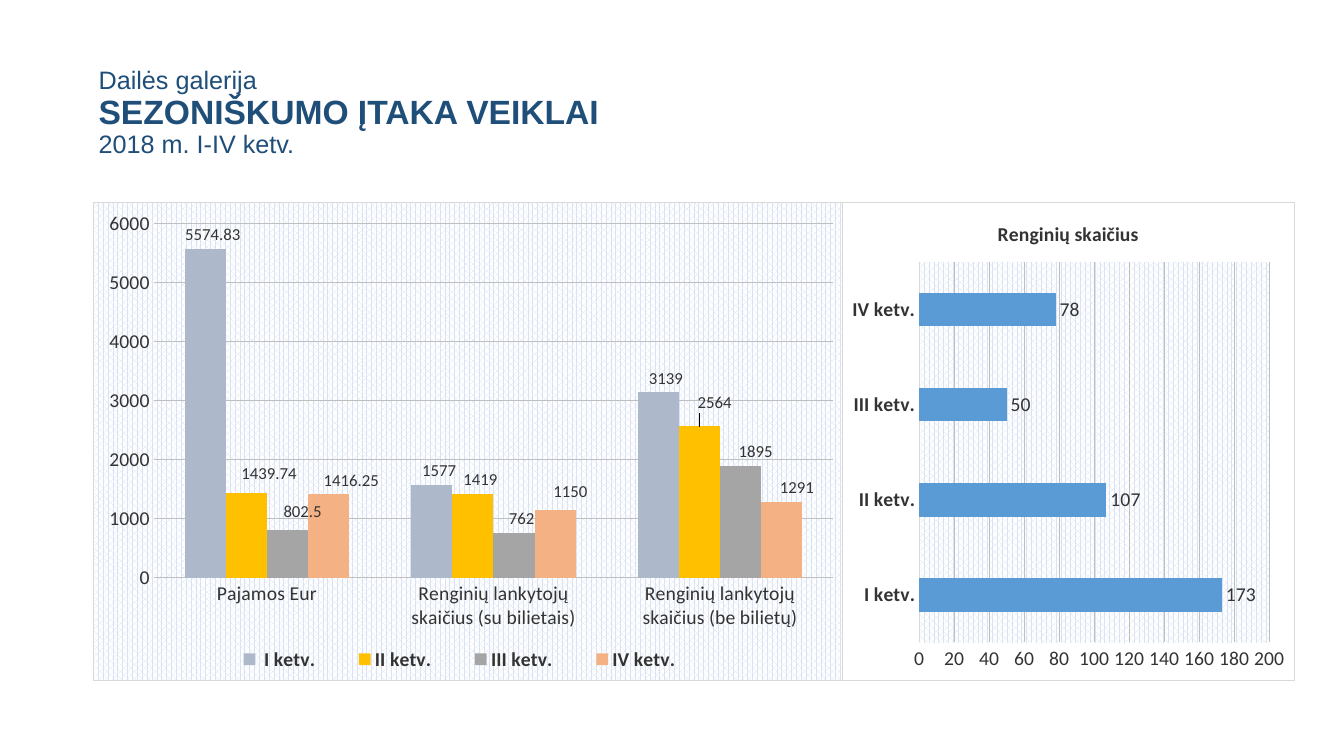
from dataclasses import dataclass

import pptx
import pptx.chart.data
import pptx.dml.color
import pptx.enum.chart
import pptx.enum.text
import pptx.oxml
import pptx.oxml.ns
import pptx.util

Inches = pptx.util.Inches


@dataclass(frozen=True)
class Theme:
    font: str = "Calibri"
    title_font: str = "Arial"
    title: str = "1F4E79"
    text: str = "333333"
    grid: str = "BFBFBF"
    border: str = "D9D9D9"
    pattern: str = "DAE3F3"
    paper: str = "FFFFFF"
    bar: str = "5B9BD5"
    quarters: tuple = ("ADB9CA", "FFC000", "A5A5A5", "F4B183")
    headline_size: int = 24
    subtitle_size: int = 18
    chart_size: int = 14
    label_size: int = 12


THEME = Theme()
QUARTERS = (" I ketv.", "II ketv.", "III ketv.", "IV ketv.")
MEASURES = ("Pajamos Eur", "Renginių lankytojų skaičius (su bilietais)",
            "Renginių lankytojų skaičius (be bilietų)")
RESULTS = ((5574.83, 1577, 3139), (1439.74, 1419, 2564),
           (802.5, 762, 1895), (1416.25, 1150, 1291))
LABEL_SHIFTS = (
    ((0.01, 0), (0.01, 0), (0.01, 0)),
    ((0.03, -0.01), (0.01, 0), (0.02, -0.02)),
    ((0.02, -0.01), (0.01, 0), (0.02, 0)),
    ((0.03, 0), (0.02, -0.01), (0.02, 0)),
)
EVENTS = (173, 107, 50, 78)


def rgb(color):
    return pptx.dml.color.RGBColor.from_string(color)


def style_font(font, size, bold=False, color=THEME.text, name=THEME.font):
    font.name = name
    font.size = pptx.util.Pt(size)
    font.bold = bold
    font.color.rgb = rgb(color)


def solid_xml(color):
    return f'<a:solidFill><a:srgbClr val="{color}"/></a:solidFill>'


def pattern_xml():
    return (f'<a:pattFill prst="pct70"><a:fgClr><a:srgbClr val="{THEME.pattern}"/></a:fgClr>'
            f'<a:bgClr><a:srgbClr val="{THEME.paper}"/></a:bgClr></a:pattFill>')


def area_style(fill, line):
    return pptx.oxml.parse_xml(
        f'<c:spPr {pptx.oxml.ns.nsdecls("c", "a")}>{fill}<a:ln w="9525">{line}</a:ln></c:spPr>')


def set_layout(element, index, position, size=None, inner=False):
    for layout in element.findall(pptx.oxml.ns.qn("c:layout")):
        element.remove(layout)
    settings = [("layoutTarget", "inner")] if inner else []
    if size:
        settings += [("xMode", "edge"), ("yMode", "edge")]
    settings += zip("xy", position)
    if size:
        settings += zip("wh", size)
    body = "".join(f'<c:{key} val="{value}"/>' for key, value in settings)
    element.insert(index, pptx.oxml.parse_xml(
        f'<c:layout {pptx.oxml.ns.nsdecls("c")}><c:manualLayout>{body}</c:manualLayout></c:layout>'))


def add_title(page, lines):
    box = page.shapes.add_textbox(Inches(0.88), Inches(0.4), Inches(11.5), Inches(1.45))
    frame = box.text_frame
    frame.word_wrap = True
    frame.vertical_anchor = pptx.enum.text.MSO_ANCHOR.MIDDLE
    frame.text = "\n".join(text for text, size, bold in lines)
    for para, (text, size, bold) in zip(frame.paragraphs, lines):
        para.line_spacing = 0.9
        style_font(para.runs[0].font, size, bold, THEME.title, THEME.title_font)


def style_axes(chart, maximum, step, bold_categories):
    for axis in (chart.category_axis, chart.value_axis):
        axis.major_tick_mark = pptx.enum.chart.XL_TICK_MARK.NONE
        axis.format.line.fill.background()
        style_font(axis.tick_labels.font, THEME.chart_size)
    chart.category_axis.tick_labels.font.bold = bold_categories
    values = chart.value_axis
    values.minimum_scale, values.maximum_scale, values.major_unit = 0, maximum, step
    values.has_major_gridlines = True
    values.major_gridlines.format.line.color.rgb = rgb(THEME.grid)
    values.major_gridlines.format.line.width = pptx.util.Pt(0.75)


def add_bars(page, kind, area, categories, series, colors, gap, label_size, fill):
    data = pptx.chart.data.CategoryChartData()
    data.categories = categories
    for name, values in series:
        data.add_series(name, values)
    chart = page.shapes.add_chart(kind, *map(Inches, area), data).chart
    style_font(chart.font, THEME.chart_size)
    chart.has_title = chart.has_legend = False
    plot = chart.plots[0]
    plot.gap_width = gap
    plot.overlap = 0
    plot.vary_by_categories = False
    for bars, color in zip(plot.series, colors):
        bars.format.fill.solid()
        bars.format.fill.fore_color.rgb = rgb(color)
        labels = bars.data_labels
        labels.show_value = True
        labels.position = pptx.enum.chart.XL_LABEL_POSITION.OUTSIDE_END
        style_font(labels.font, label_size)
    chart._chartSpace.chart.addnext(area_style(fill, solid_xml(THEME.border)))
    return chart


def shift_labels(chart):
    for bars, shifts in zip(chart.plots[0].series, LABEL_SHIFTS):
        for index, shift in enumerate(shifts):
            label = bars.points[index].data_label
            label.position = pptx.enum.chart.XL_LABEL_POSITION.OUTSIDE_END
            style_font(label.font, THEME.label_size)
            element = bars.data_labels._element.findall(pptx.oxml.ns.qn("c:dLbl"))[index]
            set_layout(element, 1, shift)


def add_results_chart(page):
    chart = add_bars(page, pptx.enum.chart.XL_CHART_TYPE.COLUMN_CLUSTERED,
                     (0.92, 2, 7.5, 4.76), MEASURES, zip(QUARTERS, RESULTS),
                     THEME.quarters, 150, THEME.label_size, pattern_xml())
    style_axes(chart, 6000, 1000, False)
    shift_labels(chart)
    chart.has_legend = True
    chart.legend.position = pptx.enum.chart.XL_LEGEND_POSITION.BOTTOM
    chart.legend.include_in_layout = False
    style_font(chart.legend.font, THEME.chart_size, True)
    set_layout(chart.legend._element, 1, (0.15, 0.92), (0.67, 0.07))
    set_layout(chart._chartSpace.chart.plotArea, 0, (0.08, 0.045), (0.9, 0.74), True)


def add_events_chart(page):
    name = "Renginių skaičius"
    chart = add_bars(page, pptx.enum.chart.XL_CHART_TYPE.BAR_CLUSTERED,
                     (8.35, 2, 4.49, 4.76), QUARTERS, [(name, EVENTS)],
                     [THEME.bar], 182, THEME.chart_size, solid_xml(THEME.paper))
    style_axes(chart, 200, 20, True)
    chart.category_axis.format.line.color.rgb = rgb(THEME.border)
    chart.has_title = True
    chart.chart_title.include_in_layout = False
    frame = chart.chart_title.text_frame
    frame.text = name
    style_font(frame.paragraphs[0].runs[0].font, THEME.chart_size, True)
    plot_area = chart._chartSpace.chart.plotArea
    plot_area.append(area_style(pattern_xml(), "<a:noFill/>"))
    set_layout(plot_area, 0, (0.17, 0.125), (0.775, 0.795), True)


def main():
    deck = pptx.Presentation()
    deck.slide_width, deck.slide_height = Inches(13.33), Inches(7.5)
    page = deck.slides.add_slide(deck.slide_layouts[6])
    add_title(page, [("Dailės galerija", THEME.subtitle_size, False),
                     ("SEZONIŠKUMO ĮTAKA VEIKLAI", THEME.headline_size, True),
                     ("2018 m. I-IV ketv.", THEME.subtitle_size, False)])
    add_results_chart(page)
    add_events_chart(page)
    deck.save("out.pptx")


if __name__ == "__main__":
    main()
